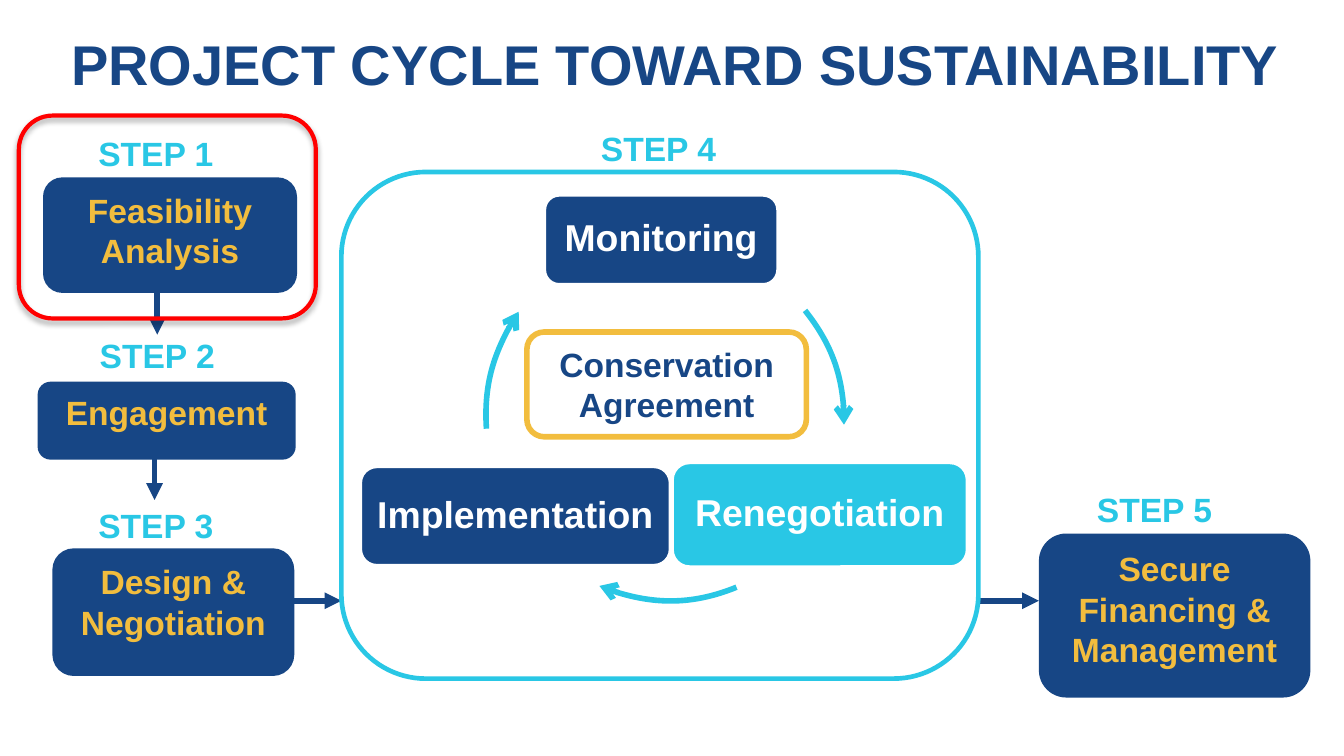
from lxml import etree
from pptx import Presentation
from pptx.dml.color import RGBColor
from pptx.enum.shapes import MSO_CONNECTOR as LineKind, MSO_SHAPE as Preset
from pptx.enum.text import MSO_ANCHOR as Anchor, MSO_AUTO_SIZE as AutoSize, PP_ALIGN as Align
from pptx.oxml.ns import qn
from pptx.util import Emu, Pt

PX = 9144  # 100 px to the inch
NAVY, CYAN, GOLD, WHITE, RED = "174685", "29C7E5", "F2BD3E", "FFFFFF", "FF0000"


def px(*lengths):
    return [Emu(length * PX) for length in lengths]


def color(hex_text):
    return RGBColor.from_string(hex_text)


def set_line(line, hex_text, width):
    line.color.rgb = color(hex_text)
    line.width = Pt(width)


def add_arrowhead(shape, kind):
    etree.SubElement(shape.line._get_or_add_ln(), qn("a:tailEnd"), type=kind)


def write(shape, text, size=18, ink=GOLD, anchor=Anchor.TOP, inset=(10, 5),
          spacing=None, after=6.3):
    frame = shape.text_frame
    frame.auto_size = AutoSize.NONE
    frame.word_wrap = True
    frame.vertical_anchor = anchor
    frame.margin_left = frame.margin_right = px(inset[0])[0]
    frame.margin_top = frame.margin_bottom = px(inset[1])[0]
    para = frame.paragraphs[0]
    para.alignment = Align.CENTER
    para.space_after = Pt(after)
    if spacing:
        para.line_spacing = spacing
    span = para.add_run()
    span.text = text
    span.font.name = "Arial"
    span.font.size = Pt(size)
    span.font.bold = True
    span.font.color.rgb = color(ink)


def add_box(page, box, fill=None, outline=None, width=2):
    shape = page.shapes.add_shape(Preset.ROUNDED_RECTANGLE, *px(*box))
    shape.shadow.inherit = False
    if fill:
        shape.fill.solid()
        shape.fill.fore_color.rgb = color(fill)
    else:
        shape.fill.background()
    if outline:
        set_line(shape.line, outline, width)
    else:
        shape.line.fill.background()
    return shape


def add_label(page, box, text):
    write(page.shapes.add_textbox(*px(*box)), text, ink=CYAN)


def add_arrow(page, start, end):
    arrow = page.shapes.add_connector(LineKind.STRAIGHT, *px(*start, *end))
    set_line(arrow.line, NAVY, 3)
    add_arrowhead(arrow, "triangle")
    etree.SubElement(arrow._element.spPr, qn("a:effectLst"))


def add_curve(page, start, *others):
    """Draw one cubic curve: start, two control points, end."""
    builder = page.shapes.build_freeform(*start, scale=PX)
    builder.add_line_segments(others, close=False)
    curve = builder.convert_to_shape()
    curve.shadow.inherit = False
    curve.fill.background()
    set_line(curve.line, CYAN, 3)
    add_arrowhead(curve, "arrow")
    # Join the straight segments into one Bezier segment
    outline = next(curve._element.iter(qn("a:path")))
    bezier = etree.SubElement(outline, qn("a:cubicBezTo"))
    for segment in outline.findall(qn("a:lnTo")):
        bezier.append(segment[0])
        outline.remove(segment)


def add_title(page, box, text):
    title = page.shapes.title
    title.left, title.top, title.width, title.height = px(*box)
    write(title, text, size=30, ink=NAVY, anchor=Anchor.MIDDLE, inset=(9, 4), after=0)


def add_step(page, box, number, text, label_at, label_width=144):
    """Place a step box, with its label offset from the box corner."""
    left, top, _, _ = box
    write(add_box(page, box, NAVY), text)
    add_label(page, (left + label_at[0], top + label_at[1], label_width, 33), f"STEP {number}")


def add_cycle(page, box):
    """Place step 4: the agreement and the three stages around it."""
    left, top, _, _ = box

    def at(x, y):
        return left + x, top + y

    add_box(page, box, outline=CYAN, width=2.5)
    add_label(page, (*at(164, -38), 144, 33), "STEP 4")

    # Stages
    for text, x, y, width, height, fill in (
        ("Monitoring", 151, 17, 174, 67, NAVY),
        ("Renegotiation", 246, 216, 220, 78, CYAN),
        ("Implementation", 14, 219, 231, 74, NAVY),
    ):
        stage = add_box(page, (*at(x, y), width, height), fill, WHITE)
        write(stage, text, size=20, ink=WHITE, anchor=Anchor.MIDDLE,
              inset=(5, 5), spacing=0.9, after=0)

    # Curved arrows between the stages
    for points in (
        ((345, 103), (364, 127), (375, 157), (374, 188)),
        ((294, 309), (262, 322), (225, 322), (192, 308)),
        ((108, 191), (106, 160), (115, 129), (132, 104)),
    ):
        add_curve(page, *(at(x, y) for x, y in points))

    # Agreement in the middle
    agreement = add_box(page, (*at(138, 119), 208, 78), outline=GOLD, width=3)
    write(agreement, "Conservation Agreement", ink=NAVY)


def add_highlight(page, box):
    frame = add_box(page, box, outline=RED, width=2.25)
    effects = frame._element.spPr.find(qn("a:effectLst"))
    shadow = etree.SubElement(effects, qn("a:outerShdw"), blurRad=str(Pt(3.1)),
                              dist=str(Pt(1.8)), dir="5400000", rotWithShape="0")
    black = etree.SubElement(shadow, qn("a:srgbClr"), val="000000")
    etree.SubElement(black, qn("a:alpha"), val="35000")


def main():
    deck = Presentation()
    deck.slide_width = px(1000)[0]
    deck.slide_height = Emu(deck.slide_width * 9 // 16)
    page = deck.slides.add_slide(deck.slide_layouts[5])

    add_title(page, (25, 28, 955, 38), "PROJECT CYCLE TOWARD SUSTAINABILITY")

    # Arrows between the steps
    for start, end in (
        ((729, 447), (773, 447)),
        ((191, 447), (254, 447)),
        ((117, 216), (117, 249)),
        ((115, 330), (115, 372)),
    ):
        add_arrow(page, start, end)

    add_cycle(page, (254, 128, 474, 377))

    # Steps outside the cycle
    add_step(page, (39, 408, 180, 95), 3, "Design & Negotiation", (5, -37))
    add_step(page, (773, 397, 202, 122), 5, "Secure Financing & Management", (14, -38))
    add_step(page, (28, 284, 192, 58), 2, "Engagement", (16, -40), 146)
    add_step(page, (32, 132, 189, 86), 1, "Feasibility Analysis", (12, -38))

    add_highlight(page, (14, 86, 221, 151))
    deck.save("out.pptx")


if __name__ == "__main__":
    main()
